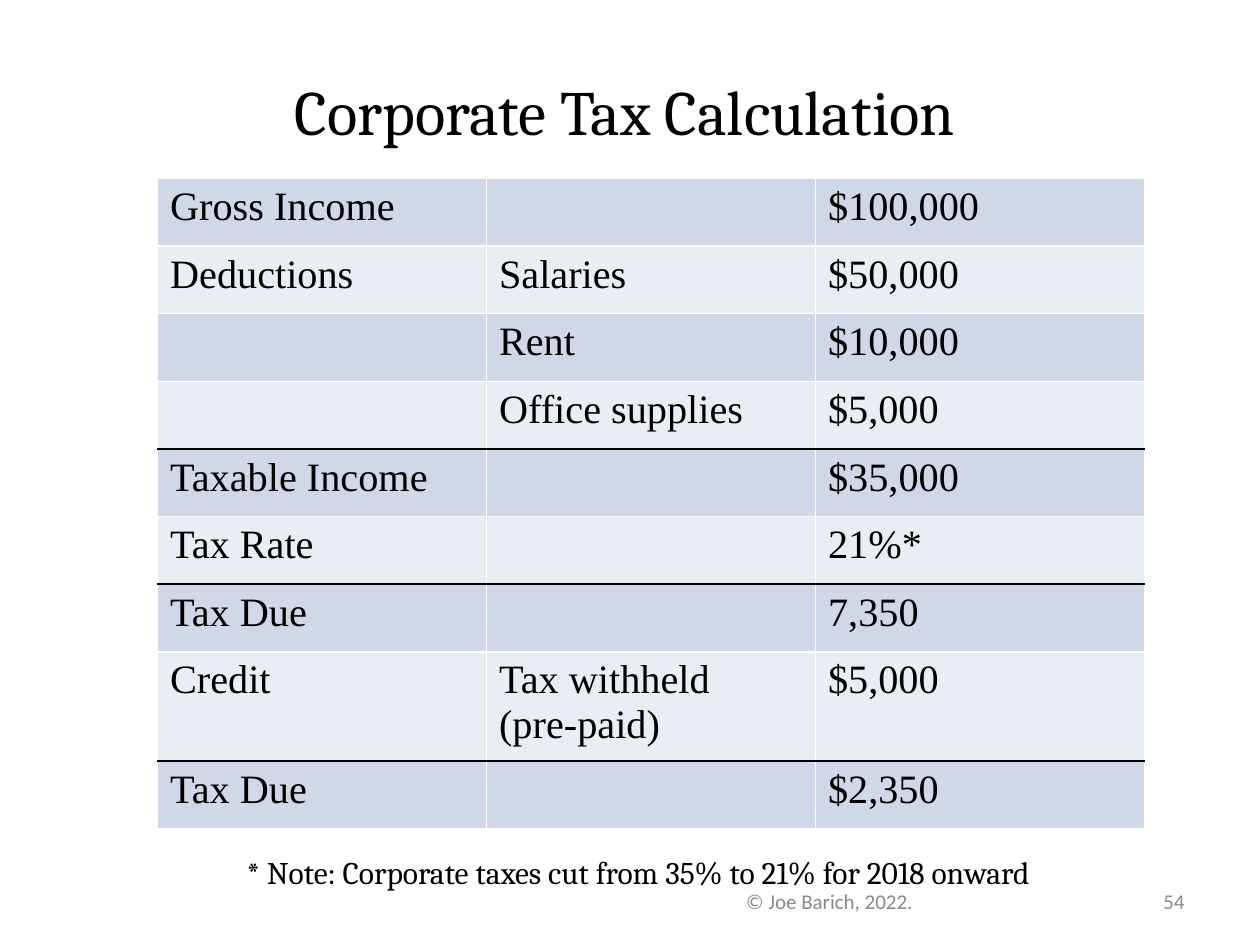
import pptx
import pptx.util
import pptx.dml.color
import pptx.enum.text
import pptx.oxml.ns
import lxml.etree

ALIGN = pptx.enum.text.PP_ALIGN
ANCHOR = pptx.enum.text.MSO_ANCHOR
ROWS = [
    ("Gross Income", "", "$100,000"),
    ("Deductions", "Salaries", "$50,000"),
    ("", "Rent", "$10,000"),
    ("", "Office supplies", "$5,000"),
    ("Taxable Income", "", "$35,000"),
    ("Tax Rate", "", "21%*"),
    ("Tax Due", "", "7,350"),
    ("Credit", "Tax withheld\n(pre-paid)", "$5,000"),
    ("Tax Due", "", "$2,350"),
]
RULED = {4, 6, 8}


def color(code):
    return pptx.dml.color.RGBColor.from_string(code)


def write(frame, text, font, size, ink="000000", align=ALIGN.LEFT, lead=None):
    for i, line in enumerate(text.split("\n")):
        para = frame.paragraphs[0] if i == 0 else frame.add_paragraph()
        para.alignment = align
        para.line_spacing = lead
        para.font.size = pptx.util.Pt(size)
        if line:
            run = para.add_run()
            run.text = line
            run.font.name = font
            run.font.size = pptx.util.Pt(size)
            run.font.color.rgb = color(ink)


def border(cell, side, ink):
    tag = pptx.oxml.ns.qn
    props = cell._tc.get_or_add_tcPr()
    line = lxml.etree.SubElement(props, tag("a:ln" + side), w="12700")
    fill = lxml.etree.SubElement(line, tag("a:solidFill"))
    lxml.etree.SubElement(fill, tag("a:srgbClr"), val=ink)


class Deck:
    cols, rows = 120, 90
    head, body, small = "Cambria", "Times New Roman", "Calibri"
    bands = "D0D8E8", "E9EDF4"

    def __init__(self):
        self.file = pptx.Presentation()
        self.file.slide_width = pptx.util.Inches(10)
        self.file.slide_height = pptx.util.Inches(7.5)
        self.slide = self.file.slides.add_slide(self.file.slide_layouts[6])

    def area(self, x, y, w, h):
        across = self.file.slide_width / self.cols
        down = self.file.slide_height / self.rows
        return round(x * across), round(y * down), round(w * across), round(h * down)

    def text(self, place, text, anchor=ANCHOR.MIDDLE, **style):
        frame = self.slide.shapes.add_textbox(*self.area(*place)).text_frame
        frame.word_wrap = True
        frame.vertical_anchor = anchor
        write(frame, text, **style)

    def table(self, place, data, ruled):
        area = self.area(*place)
        grid = self.slide.shapes.add_table(len(data), len(data[0]), *area).table
        grid.first_row = False
        spans = [1.5 if any("\n" in t for t in row) else 1 for row in data]
        for r, row in enumerate(data):
            grid.rows[r].height = round(area[3] * spans[r] / sum(spans))
            for c, text in enumerate(row):
                cell = grid.cell(r, c)
                write(cell.text_frame, text, self.body, 23)
                for side in "LR":
                    border(cell, side, "FFFFFF")
                for side, edge in (("T", r), ("B", r + 1)):
                    border(cell, side, "000000" if edge in ruled else "FFFFFF")
                cell.fill.solid()
                cell.fill.fore_color.rgb = color(self.bands[r % 2])


def main():
    deck = Deck()
    deck.text((3, 2, 113, 17), "Corporate Tax Calculation",
              font=deck.head, size=36, align=ALIGN.CENTER)
    deck.table((15, 17, 94, 61.2), ROWS, RULED)
    deck.text((100, 83.4, 14, 4.8), "54",
              font=deck.small, size=12, ink="8C8C8C", align=ALIGN.RIGHT)
    deck.text((60, 83.4, 38, 4.8), "© Joe Barich, 2022.",
              font=deck.small, size=12, ink="898989", align=ALIGN.CENTER)
    deck.text((22.3, 81.1, 84.4, 4.4),
              "* Note: Corporate taxes cut from 35% to 21% for 2018 onward",
              anchor=ANCHOR.TOP, font=deck.head, size=18, lead=0.9)
    deck.file.save("out.pptx")


if __name__ == "__main__":
    main()
